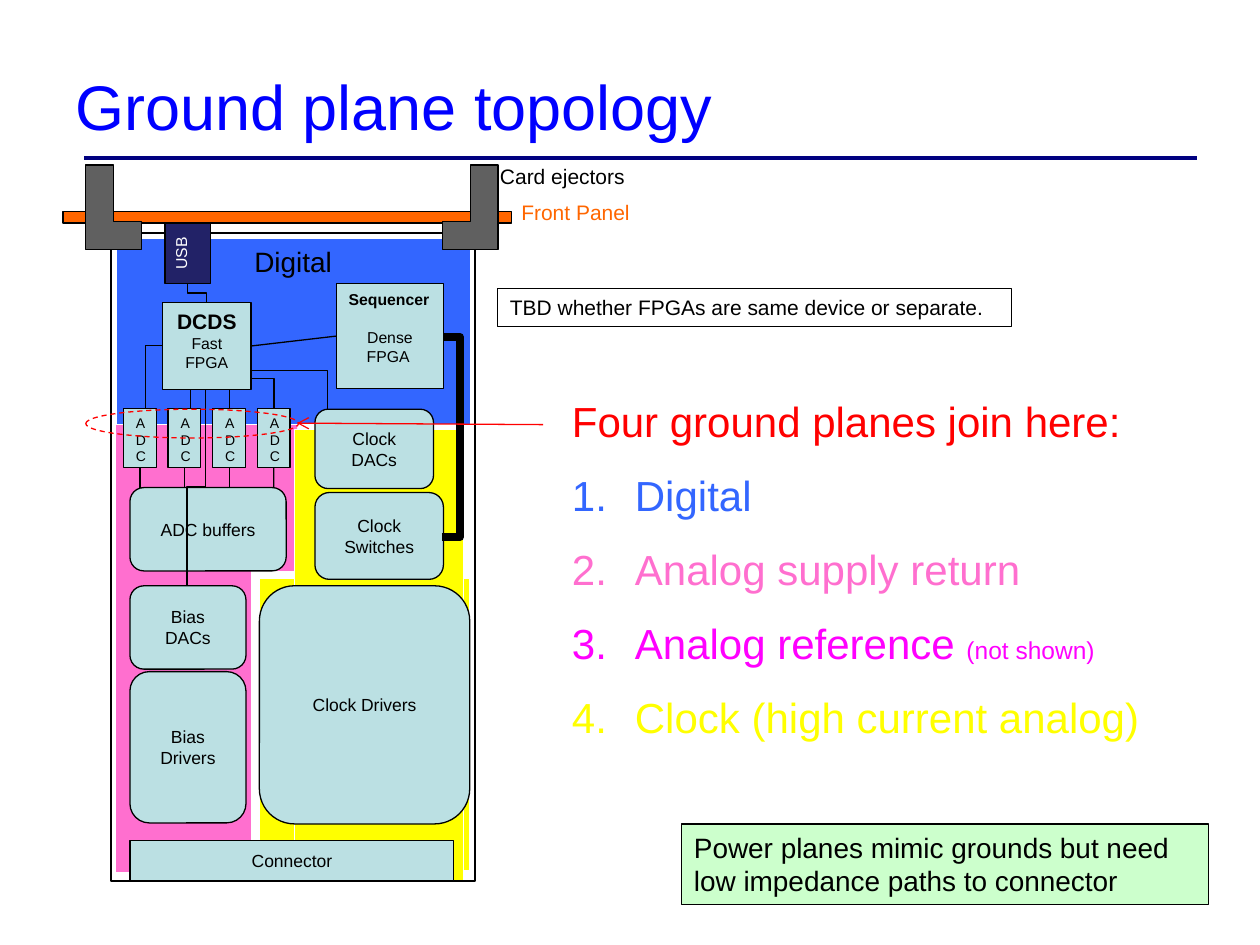
from dataclasses import dataclass

from lxml import etree
from pptx import Presentation
from pptx.dml.color import RGBColor
from pptx.enum.dml import MSO_LINE
from pptx.enum.shapes import MSO_CONNECTOR as CONN, MSO_SHAPE as SHAPE
from pptx.enum.text import MSO_ANCHOR as ANCHOR, PP_ALIGN as ALIGN
from pptx.oxml.ns import qn
from pptx.util import Cm, Pt

BLACK, WHITE, RED = "000000", "FFFFFF", "FF0000"
PALE, BLUE, PINK, YELLOW, ORANGE = "BBE0E3", "3366FF", "FF6FCF", "FFFF00", "FF6600"


@dataclass
class Block:
    """A filled shape, with lengths in cm."""
    x: float
    y: float
    w: float
    h: float
    text: str = ""
    fill: str | None = PALE
    line: str | None = BLACK
    kind: SHAPE = SHAPE.RECTANGLE
    size: float = 10
    color: str = BLACK
    align: ALIGN = ALIGN.CENTER
    anchor: ANCHOR = ANCHOR.TOP


@dataclass
class Elbow:
    """A bent connector: its box in cm before it is turned by rot degrees."""
    x: float
    y: float
    w: float
    h: float
    rot: int = 0
    flips: str = ""
    preset: str = "bentConnector3"
    adjust: tuple[float, ...] = ()
    weight: float = 0.75


def rgb(color: str) -> RGBColor:
    return RGBColor.from_string(color)


def add_run(p, text: str, *, size: float, color: str = BLACK, bold: bool = False) -> None:
    r = p.add_run()
    r.text = text
    f = r.font
    f.name, f.size, f.bold = "Arial", Pt(size), bold
    f.color.rgb = rgb(color)


def add_text(s, x: float, y: float, w: float, h: float, text: str, *, size: float,
             color: str, anchor: ANCHOR = ANCHOR.TOP):
    tf = s.shapes.add_textbox(Cm(x), Cm(y), Cm(w), Cm(h)).text_frame
    tf.word_wrap, tf.vertical_anchor = True, anchor
    add_run(tf.paragraphs[0], text, size=size, color=color)
    return tf


def add_block(s, b: Block):
    sp = s.shapes.add_shape(b.kind, Cm(b.x), Cm(b.y), Cm(b.w), Cm(b.h))
    sp.shadow.inherit = False
    if b.fill:
        sp.fill.solid()
        sp.fill.fore_color.rgb = rgb(b.fill)
    else:
        sp.fill.background()
    if b.line:
        sp.line.color.rgb, sp.line.width = rgb(b.line), Pt(0.75)
    else:
        sp.line.fill.background()
    tf = sp.text_frame
    tf.word_wrap, tf.vertical_anchor = True, b.anchor
    tf.paragraphs[0].alignment = b.align
    if b.text:
        add_run(tf.paragraphs[0], b.text, size=b.size, color=b.color)
    return sp


def add_line(s, x1: float, y1: float, x2: float, y2: float, *, color: str = BLACK,
             weight: float = 0.75, kind: CONN = CONN.STRAIGHT):
    c = s.shapes.add_connector(kind, Cm(x1), Cm(y1), Cm(x2), Cm(y2))
    c.line.color.rgb, c.line.width = rgb(color), Pt(weight)
    etree.SubElement(c._element.spPr, qn("a:effectLst"))
    return c


def flip(shape, axes: str) -> None:
    for axis in axes:
        shape._element.spPr.find(qn("a:xfrm")).set("flip" + axis.upper(), "1")


def add_elbow(s, e: Elbow) -> None:
    c = add_line(s, e.x, e.y, e.x + e.w, e.y + e.h, weight=e.weight, kind=CONN.ELBOW)
    flip(c, e.flips)
    c._element.spPr.find(qn("a:xfrm")).set("rot", str(e.rot * 60000))
    geom = c._element.spPr.find(qn("a:prstGeom"))
    geom.set("prst", e.preset)
    for i, value in enumerate(e.adjust, 1):
        etree.SubElement(geom.find(qn("a:avLst")), qn("a:gd"), name=f"adj{i}",
                         fmla=f"val {round(value * 100000)}")


def number(p) -> None:
    pPr = p._p.get_or_add_pPr()
    pPr.set("marL", str(Cm(1.27)))
    pPr.set("indent", str(-Cm(1.27)))
    etree.SubElement(pPr, qn("a:buAutoNum"), type="arabicPeriod")


def rounded(x: float, y: float, w: float, h: float, text: str) -> Block:
    return Block(x, y, w, h, text, kind=SHAPE.ROUNDED_RECTANGLE, anchor=ANCHOR.MIDDLE)


def draw_planes(s) -> None:
    for b in (
        Block(5.23, 11.66, 4.24, 5.89, fill=YELLOW, line=WHITE),
        Block(3.15, 8.56, 2.84, 2.95, fill=PINK, line=None),
        Block(5.94, 8.66, 3.4, 9.09, fill=YELLOW, line=WHITE),
        Block(2.34, 8.56, 2.72, 9.02, fill=PINK, line=None),
        Block(2.24, 4.7, 7.34, 13.06, fill=None),
        Block(1.27, 4.27, 9.04, 0.23, fill=ORANGE),
        Block(2.34, 4.8, 7.14, 3.76, "Digital", fill=BLUE, line=WHITE, size=16),
    ):
        add_block(s, b)


def draw_circuit(s) -> None:
    usb = add_block(s, Block(3.33, 4.5, 0.91, 1.22, "USB", fill="222267", size=9, color=WHITE))
    usb.text_frame._txBody.bodyPr.set("vert", "vert270")

    dcds = add_block(s, Block(3.28, 6.1, 1.78, 1.75))
    p = dcds.text_frame.paragraphs[0]
    add_run(p, "DCDS ", size=12, bold=True)
    add_run(p, "Fast FPGA", size=9)

    sequencer = add_block(s, Block(6.78, 5.72, 2.16, 2.11, align=ALIGN.LEFT))
    tf = sequencer.text_frame
    add_run(tf.paragraphs[0], "Sequencer", size=9, bold=True)
    p = tf.add_paragraph()
    p.alignment, p.space_before = ALIGN.CENTER, Pt(11)
    add_run(p, "Dense FPGA ", size=9)

    adcs = [add_block(s, Block(2.49 + 0.9 * i, 8.23, 0.66, 1.19, "ADC", size=8,
                               align=ALIGN.LEFT)) for i in range(4)]
    for b in (
        rounded(2.62, 9.83, 3.15, 1.68, "ADC buffers"),
        rounded(2.62, 11.81, 2.34, 1.68, "Bias DACs"),
        rounded(2.62, 13.54, 2.34, 3.05, "Bias Drivers"),
        Block(2.62, 16.94, 6.53, 0.81, "Connector", anchor=ANCHOR.MIDDLE),
        rounded(6.35, 8.25, 2.39, 1.6, "Clock DACs"),
        rounded(5.23, 11.81, 4.24, 4.8, "Clock Drivers"),
        rounded(6.35, 9.93, 2.59, 1.75, "Clock Switches"),
    ):
        add_block(s, b)

    for i, adc in enumerate(adcs):
        x = 2.82 + 0.9 * i
        add_line(s, x, 9.83, x, 9.42).end_connect(adc, 2)
    add_line(s, 3.84, 8.23, 3.84, 7.85)
    add_line(s, 4.62, 8.23, 4.62, 7.85).begin_connect(adcs[2], 0)
    link = add_line(s, 5.06, 6.98, 6.78, 6.78)
    link.begin_connect(dcds, 3)
    link.end_connect(sequencer, 1)

    for e in (
        Elbow(3.78, 5.72, 0.38, 0.38, 270, "h"),
        Elbow(2.46, 7.44, 1.27, 0.33, 90, "hv", "bentConnector2"),
        Elbow(4.9, 7.62, 0.79, 0.46, 270, "v", adjust=(0.77,)),
        Elbow(1.98, 9.63, 3.96, 0.38, 90, "hv"),
        Elbow(6.91, 8.79, 4.04, 0.04, 90, "hv", "bentConnector4", (0, 9), 4.5),
        Elbow(5.05, 7.47, 1.73, 0.79, adjust=(0.9,)),
    ):
        add_elbow(s, e)


def draw_callouts(s) -> None:
    arrow = add_line(s, 10.95, 8.56, 5.99, 8.53, color=RED)
    etree.SubElement(arrow.line._get_or_add_ln(), qn("a:tailEnd"), type="arrow")
    junction = add_block(s, Block(1.73, 8.25, 4.29, 0.58, fill=None, line=RED, kind=SHAPE.OVAL))
    junction.line.dash_style = MSO_LINE.DASH
    for x, axes in ((1.73, ""), (8.92, "h")):
        flip(add_block(s, Block(x, 3.33, 1.12, 1.7, fill="606060", kind=SHAPE.CORNER)), axes)
    add_text(s, 9.83, 3.18, 5.23, 0.76, "Card ejectors", size=12, color=BLACK)
    add_text(s, 10.26, 3.89, 5.23, 0.76, "Front Panel", size=12, color=ORANGE)
    add_block(s, Block(13.74, 16.61, 10.62, 1.63,
                       "Power planes mimic grounds but need low impedance paths to connector",
                       fill="CCFFCC", size=16, align=ALIGN.LEFT))
    add_block(s, Block(10.03, 5.82, 10.36, 0.76, "TBD whether FPGAs are same device or separate.",
                       fill=None, size=12, align=ALIGN.LEFT))


def draw_list(s) -> None:
    tf = add_text(s, 11.28, 7.85, 12.85, 9.07, "Four ground planes join here:", size=24, color=RED)
    for text, color, remark in (
        ("Digital", BLUE, ""),
        ("Analog supply return", PINK, ""),
        ("Analog reference ", "FF00FF", "(not shown)"),
        ("Clock (high current analog)", YELLOW, ""),
    ):
        p = tf.add_paragraph()
        p.space_before = Pt(13.5)
        number(p)
        add_run(p, text, size=24, color=color)
        if remark:
            add_run(p, remark, size=14, color=color)


def main() -> None:
    prs = Presentation()
    prs.slide_width, prs.slide_height = Cm(25.4), Cm(19.05)
    s = prs.slides.add_slide(prs.slide_layouts[6])
    add_line(s, 1.7, 3.18, 24.13, 3.18, color="000080", weight=2.5)
    add_text(s, 1.27, 1.07, 23.06, 2.11, "Ground plane topology", size=36, color="0000FF",
             anchor=ANCHOR.MIDDLE)
    draw_planes(s)
    draw_circuit(s)
    draw_callouts(s)
    draw_list(s)
    prs.save("out.pptx")


if __name__ == "__main__":
    main()
